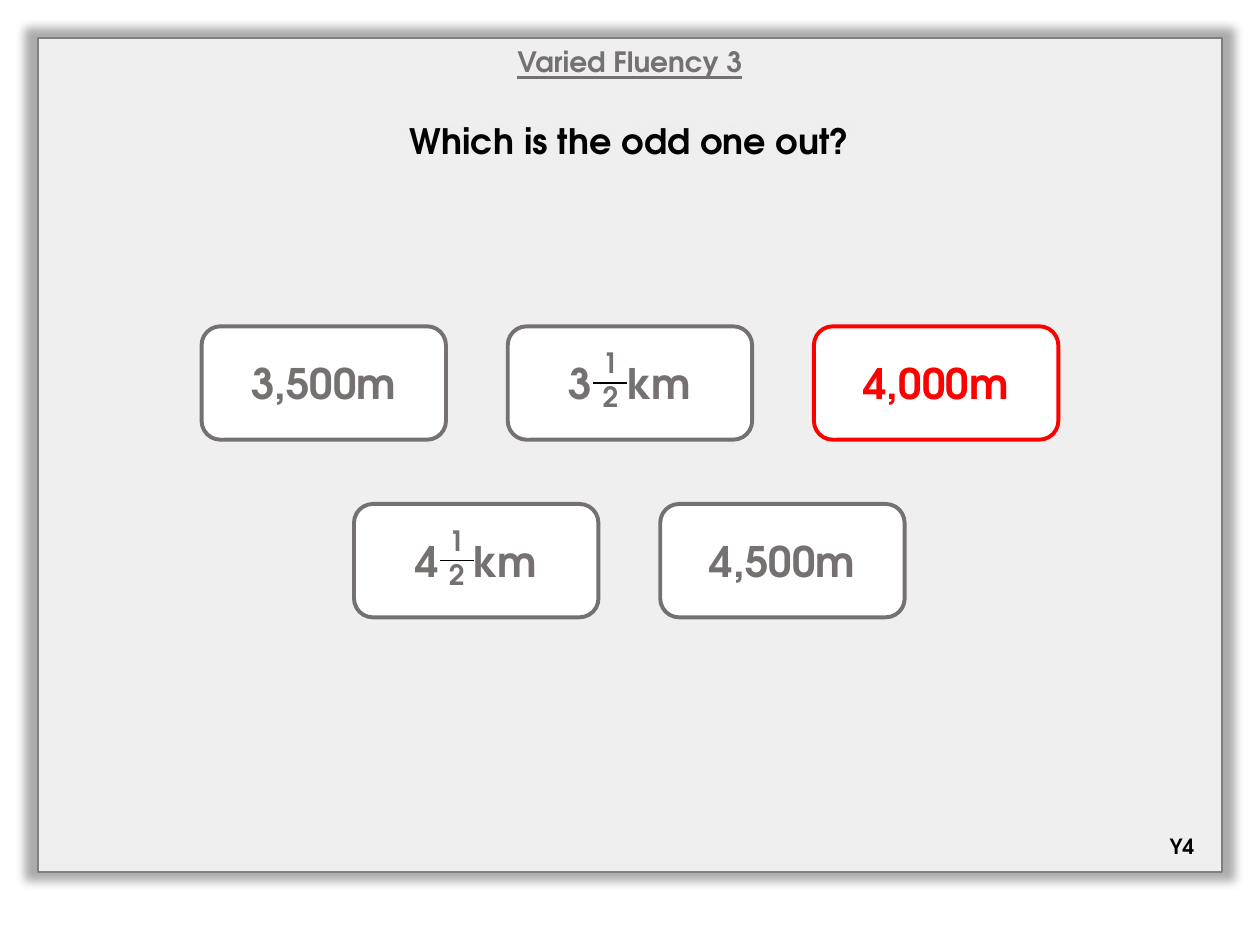
from lxml import etree
from pptx import Presentation
from pptx.dml.color import RGBColor
from pptx.enum.shapes import MSO_SHAPE as Shape
from pptx.enum.text import MSO_ANCHOR as Anchor, PP_ALIGN as Align
from pptx.oxml import parse_xml
from pptx.oxml.ns import nsdecls, qn
from pptx.util import Inches, Pt

FONT = "TeX Gyre Adventor"
COLORS = {"grey": "767171", "red": "FF0000", "black": "000000",
          "white": "FFFFFF", "edge": "808080"}
NO_GRID = "{2D5ABB26-0587-4C30-8999-92F81FD0307C}"


def tint(name):
    return RGBColor.from_string(COLORS[name])


def write(frame, text, size=24, color="grey", line=False, gap=None):
    """Add a centred bold run; gap widens its letter spacing, in points."""
    para = frame.paragraphs[0]
    para.alignment = Align.CENTER
    run = para.add_run()
    run.text = text
    font = run.font
    font.name, font.size, font.bold = FONT, Pt(size), True
    font.underline = line
    font.color.rgb = tint(color)
    if gap:
        run._r.get_or_add_rPr().set("spc", str(int(gap * 100)))


prs = Presentation()
prs.slide_width, prs.slide_height = Inches(10), Inches(7.5)
slide = prs.slides.add_slide(prs.slide_layouts[5])
shapes = slide.shapes

# Panel with the question, behind the title
panel = shapes.add_shape(Shape.RECTANGLE, Inches(0.3), Inches(0.3),
                         Inches(9.4), Inches(6.62))
panel.fill.solid()
panel.fill.fore_color.rgb = tint("white")
panel.line.color.rgb = tint("edge")
panel.line.width = Pt(1)
white = panel._element.spPr.find(qn("a:solidFill"))[0]
etree.SubElement(white, qn("a:alpha")).set("val", "82000")
panel._element.spPr.append(parse_xml(
    f'<a:effectLst {nsdecls("a")}><a:outerShdw blurRad="63500" sx="102000"'
    ' sy="102000" algn="ctr" rotWithShape="0"><a:srgbClr val="000000">'
    '<a:alpha val="40000"/></a:srgbClr></a:outerShdw></a:effectLst>'))
frame = panel.text_frame
frame.vertical_anchor = Anchor.TOP
frame.margin_top = Inches(0.65)
write(frame, "Which is the odd one out?", size=20, color="black")

title = shapes.title
title.left, title.top = Inches(0.3), Inches(0.3)
title.width, title.height = Inches(9.4), Inches(0.4)
title.text_frame.vertical_anchor = Anchor.TOP
write(title.text_frame, "Varied Fluency 3", size=16, line=True)
title._element.addprevious(panel._element)

# Answer cards: a whole number before a half leaves room for the fraction
rows = [["3,500m", ("3", "km"), "4,000m"], [("4", "km"), "4,500m"]]
halves = []
for r, row in enumerate(rows):
    for c, label in enumerate(row):
        left, top = 1.6 + 1.21 * r + 2.43 * c, 2.59 + 1.41 * r
        color = "red" if label == "4,000m" else "grey"
        card = shapes.add_shape(Shape.ROUNDED_RECTANGLE, Inches(left),
                                Inches(top), Inches(1.94), Inches(0.9))
        card.shadow.inherit = False
        card.fill.solid()
        card.fill.fore_color.rgb = tint("white")
        card.line.color.rgb = tint(color)
        card.line.width = Pt(2.25)
        frame = card.text_frame
        frame.vertical_anchor = Anchor.MIDDLE
        if isinstance(label, tuple):
            whole, unit = label
            write(frame, whole)
            write(frame, " ", gap=13.3)
            write(frame, unit)
            halves.append((left + 0.68, top + 0.18))
        else:
            write(frame, label, color=color)

# Fractions: two cells with a rule between them
for left, top in halves:
    table = shapes.add_table(2, 1, Inches(left), Inches(top),
                             Inches(0.27), Inches(0.54)).table
    table.first_row = table.horz_banding = False
    table._tbl.tblPr.find(qn("a:tableStyleId")).text = NO_GRID
    for i, (digit, side) in enumerate([("1", "lnB"), ("2", "lnT")]):
        cell = table.cell(i, 0)
        cell.margin_left = cell.margin_right = 0
        cell.margin_top = cell.margin_bottom = 0
        cell.vertical_anchor = Anchor.MIDDLE
        cell.fill.background()
        write(cell.text_frame, digit, size=16)
        cell._tc.get_or_add_tcPr().insert(0, parse_xml(
            f'<a:{side} {nsdecls("a")} w="12700"><a:solidFill>'
            f'<a:srgbClr val="{COLORS["black"]}"/></a:solidFill></a:{side}>'))

# Year label
year = shapes.add_textbox(Inches(9.12), Inches(6.57), Inches(0.52), Inches(0.3))
year.text_frame.word_wrap = True
write(year.text_frame, "Y4", size=12, color="black")

prs.save("out.pptx")
